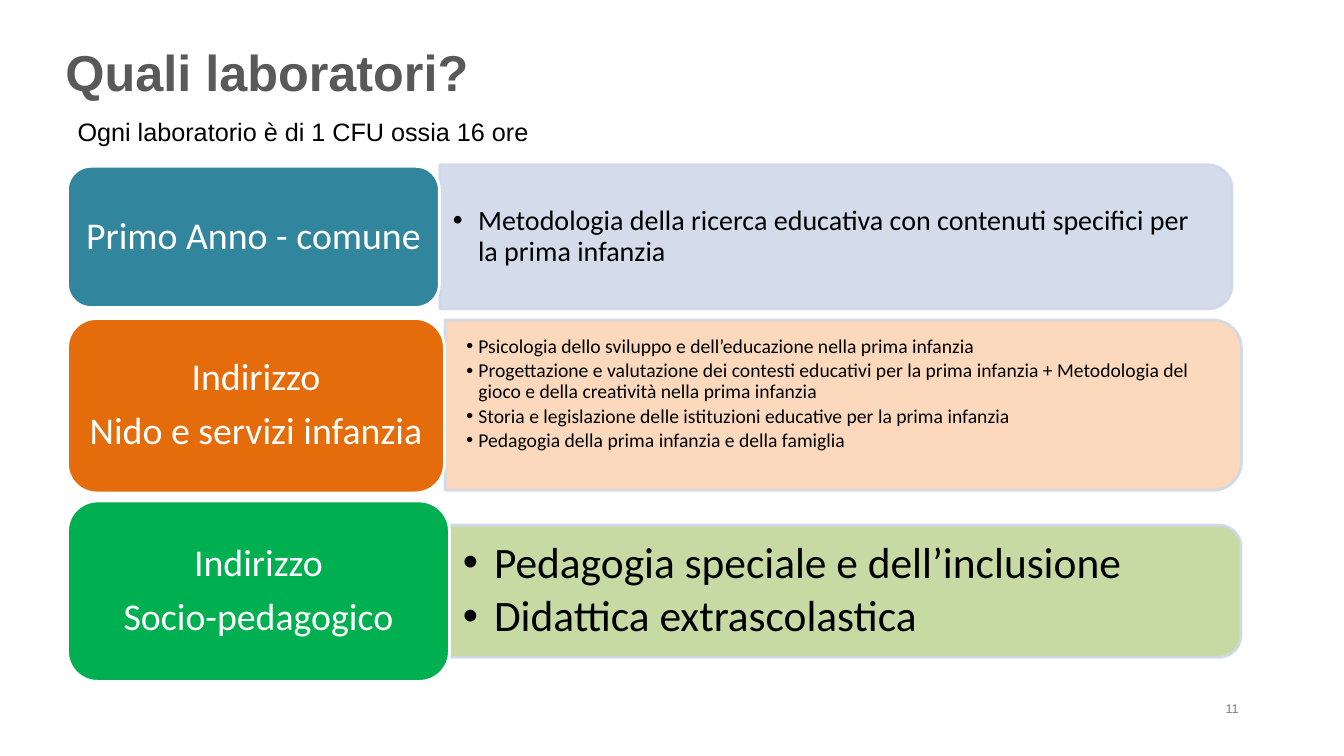
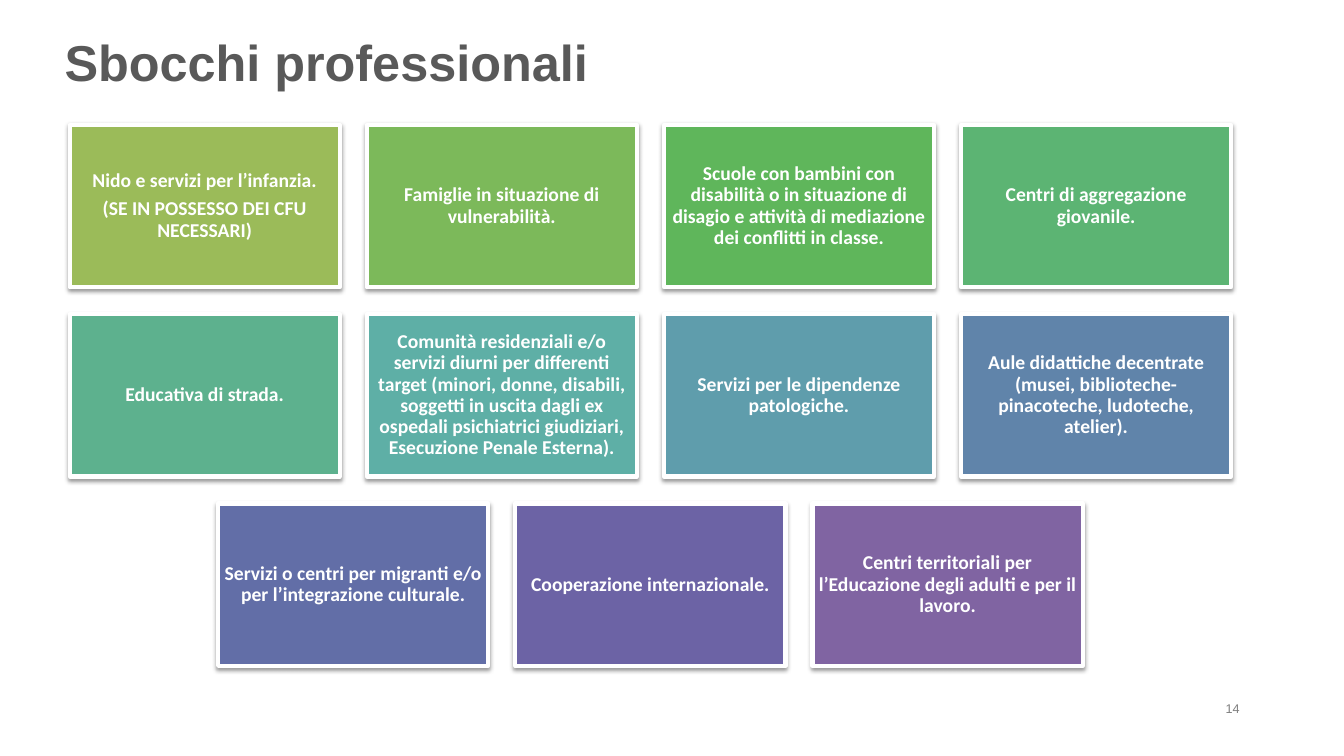
"""Build two slides on degree workshops and career outlets."""
from dataclasses import dataclass

from lxml import etree
from pptx import Presentation
from pptx import util as u
from pptx.dml.color import RGBColor
from pptx.enum import shapes, text
from pptx.oxml.ns import qn

WIDTH, HEIGHT = u.Inches(13.33), u.Inches(7.5)
WHITE = RGBColor(0xFF, 0xFF, 0xFF)
BLACK = RGBColor(0x00, 0x00, 0x00)
TITLE_GREY = RGBColor(0x59, 0x59, 0x59)
NUMBER_GREY = RGBColor(0x7F, 0x7F, 0x7F)
TEAL = RGBColor(0x31, 0x85, 0x9C)
ORANGE = RGBColor(0xE4, 0x6C, 0x0A)
GREEN = RGBColor(0x00, 0xB0, 0x50)
PALE_BLUE = RGBColor(0xD0, 0xD8, 0xE8)
PALE_ORANGE = RGBColor(0xFC, 0xD5, 0xB5)
PALE_GREEN = RGBColor(0xC3, 0xD6, 0x9B)
CARD_COLORS = [RGBColor.from_string(code) for code in (
    "9BBB59", "7CB95A", "5FB65B", "5CB473", "5DB18E", "5EAFA6",
    "5F9DAC", "6084AA", "626EA7", "6C63A5", "8064A2")]

TITLE = {"name": "Arial", "size": u.Pt(36), "bold": True}
NOTE = {"name": "Arial", "size": u.Pt(18), "bold": False}
NUMBER = {"name": "Arial", "size": u.Pt(9), "bold": False}
HEADER = {"name": "Calibri", "size": u.Pt(27), "bold": False}
CARD = {"name": "Calibri", "size": u.Pt(14), "bold": True}
LEFT, CENTER = text.PP_ALIGN.LEFT, text.PP_ALIGN.CENTER
TOP, MIDDLE = text.MSO_ANCHOR.TOP, text.MSO_ANCHOR.MIDDLE


@dataclass(frozen=True)
class Box:
    """A rectangle in percent of the slide's width and height."""
    left: float
    top: float
    width: float
    height: float

    def place(self) -> tuple[int, int, int, int]:
        """Return the rectangle in slide units."""
        return (int(WIDTH * self.left / 100), int(HEIGHT * self.top / 100),
                int(WIDTH * self.width / 100), int(HEIGHT * self.height / 100))


@dataclass(frozen=True)
class Track:
    """A coloured header with its list panel."""
    header: Box
    header_color: RGBColor
    labels: list[str]
    panel: Box
    panel_color: RGBColor
    items: list[str]
    size: float
    indent: float
    inset: float
    bottom: float


NUMBER_BOX = Box(90.45, 92, 4.58, 5.33)
NOTE_BOX = Box(5.02, 14.67, 84.67, 5.33)
FIRST_CARD = Box(5.18, 16.53, 20.1, 21.47)
COLUMNS = 4
GAP = 0.1 * FIRST_CARD.width
ROW_GAP = GAP * WIDTH / HEIGHT

TRACKS = [
    Track(Box(5.02, 22, 27.67, 18.67), TEAL, ["Primo Anno - comune"],
          Box(32.72, 21.8, 58.95, 19.07), PALE_BLUE,
          ["Metodologia della ricerca educativa con contenuti specifici per "
           "la prima infanzia"], 20, 0.25, 0.13, 0.06),
    Track(Box(5.02, 42.13, 28.05, 23.07), ORANGE,
          ["Indirizzo", "Nido e servizi infanzia"],
          Box(33.12, 42.33, 59.25, 22.53), PALE_ORANGE,
          ["Psicologia dello sviluppo e dell’educazione nella prima infanzia",
           "Progettazione e valutazione dei contesti educativi per la prima "
           "infanzia + Metodologia del gioco e della creatività nella prima "
           "infanzia",
           "Storia e legislazione delle istituzioni educative per la prima "
           "infanzia",
           "Pedagogia della prima infanzia e della famiglia"],
          14, 0.12, 0.21, 0.28),
    Track(Box(5.02, 66.27, 28.42, 23.87), GREEN,
          ["Indirizzo", "Socio-pedagogico"],
          Box(33.46, 69.47, 58.88, 17.47), PALE_GREEN,
          ["Pedagogia speciale e dell’inclusione", "Didattica extrascolastica"],
          31, 0.31, 0.13, 0.06),
]
CAREERS = [
    ["Nido e servizi per l’infanzia.", "(SE IN POSSESSO DEI CFU NECESSARI)"],
    ["Famiglie in situazione di vulnerabilità."],
    ["Scuole con bambini con disabilità o in situazione di disagio e attività "
     "di mediazione dei conflitti in classe."],
    ["Centri di aggregazione giovanile."],
    ["Educativa di strada."],
    ["Comunità residenziali e/o servizi diurni per differenti target (minori, "
     "donne, disabili, soggetti in uscita dagli ex ospedali psichiatrici "
     "giudiziari, Esecuzione Penale Esterna)."],
    ["Servizi per le dipendenze patologiche."],
    ["Aule didattiche decentrate (musei, biblioteche-pinacoteche, ludoteche, "
     "atelier)."],
    ["Servizi o centri per migranti e/o per l’integrazione culturale."],
    ["Cooperazione internazionale."],
    ["Centri territoriali per l’Educazione degli adulti e per il lavoro."],
]


def move(shape, box: Box) -> None:
    """Put a shape on a percent rectangle."""
    for name, value in zip(("left", "top", "width", "height"), box.place()):
        setattr(shape, name, value)


def write(shape, lines: list[str], font: dict, color: RGBColor, align=LEFT,
          anchor=TOP, insets=(0.1, 0.05, 0.1, 0.05), spacing: float = 1,
          after: float = 0, indent: float = 0) -> None:
    """Fill a shape with paragraphs, bulleted when an indent is given."""
    frame = shape.text_frame
    settings = {"word_wrap": True, "auto_size": text.MSO_AUTO_SIZE.NONE,
                "vertical_anchor": anchor}
    for side, inset in zip(("left", "top", "right", "bottom"), insets):
        settings["margin_" + side] = u.Inches(inset)
    for name, value in settings.items():
        setattr(frame, name, value)
    layout = {"alignment": align, "line_spacing": spacing,
              "space_before": u.Pt(0),
              "space_after": u.Pt(round(font["size"].pt * after, 1))}
    for index, line in enumerate(lines):
        para = frame.add_paragraph() if index else frame.paragraphs[0]
        for name, value in layout.items():
            setattr(para, name, value)
        marks = para._p.get_or_add_pPr()
        marks.set("marL", str(u.Inches(indent)))
        marks.set("indent", str(-u.Inches(indent)))
        if indent:
            bullet_font = etree.SubElement(marks, qn("a:buFont"))
            bullet_font.set("typeface", "Arial")
            etree.SubElement(marks, qn("a:buChar")).set("char", "•")
        else:
            etree.SubElement(marks, qn("a:buNone"))
        span = para.add_run()
        span.text = line
        for name, value in font.items():
            setattr(span.font, name, value)
        span.font.color.rgb = color


def add_block(page, kind, box: Box, fill: RGBColor, line: RGBColor,
              weight: float):
    """Add a flat filled and outlined shape."""
    block = page.shapes.add_shape(kind, *box.place())
    block.shadow.inherit = False
    block.fill.solid()
    block.fill.fore_color.rgb = fill
    block.line.color.rgb = line
    block.line.width = u.Pt(weight)
    return block


def add_page(deck, layout: str, title: str, title_box: Box, number: str):
    """Add a slide with its title and number."""
    page = deck.slides.add_slide(deck.slide_layouts.get_by_name(layout))
    move(page.shapes.title, title_box)
    write(page.shapes.title, [title], TITLE, TITLE_GREY, anchor=MIDDLE)
    number_box = page.shapes.add_textbox(*NUMBER_BOX.place())
    write(number_box, [number], NUMBER, NUMBER_GREY)
    return page


def add_panel(page, box: Box, color: RGBColor) -> None:
    """Add a translucent panel rounded on its right side."""
    panel = add_block(page, shapes.MSO_SHAPE.ROUND_2_SAME_RECTANGLE, box,
                      color, PALE_BLUE, 2)
    left, top, width, height = box.place()
    panel.left = left + (width - height) // 2
    panel.top = top + (height - width) // 2
    panel.width, panel.height = height, width
    panel.rotation = 90
    for tint in panel.element.spPr.iter(qn("a:srgbClr")):
        etree.SubElement(tint, qn("a:alpha")).set("val", "90000")


def add_track(page, track: Track, body) -> None:
    """Draw a panel, its list and its header."""
    add_panel(page, track.panel, track.panel_color)
    move(body, track.panel)
    body.width -= u.Inches(0.07)
    body.element.getparent().append(body.element)
    font = {"name": "Calibri", "size": u.Pt(track.size), "bold": False}
    insets = (track.inset, 0.06, track.inset, track.bottom)
    write(body, track.items, font, BLACK, anchor=MIDDLE, insets=insets,
          spacing=0.9, after=0.15, indent=track.indent)
    header = add_block(page, shapes.MSO_SHAPE.ROUNDED_RECTANGLE, track.header,
                       track.header_color, WHITE, 2)
    write(header, track.labels, HEADER, WHITE, CENTER, MIDDLE,
          (0.11, 0.06, 0.11, 0.06), 0.9, 0.35)


def add_card(page, box: Box, color: RGBColor, lines: list[str]) -> None:
    """Draw a career card with a soft shadow below."""
    card = add_block(page, shapes.MSO_SHAPE.RECTANGLE, box, color, WHITE, 3)
    effects = card.element.spPr.find(qn("a:effectLst"))
    shadow = etree.SubElement(effects, qn("a:outerShdw"))
    for name, value in {"blurRad": u.Pt(3.1), "dist": u.Pt(1.6),
                        "dir": 5400000, "rotWithShape": 0}.items():
        shadow.set(name, str(value))
    tint = etree.SubElement(shadow, qn("a:srgbClr"))
    tint.set("val", str(BLACK))
    etree.SubElement(tint, qn("a:alpha")).set("val", "38000")
    write(card, lines, CARD, WHITE, CENTER, MIDDLE, (0.06,) * 4, 0.9, 0.35)


def build_workshops(deck) -> None:
    """Build the slide of workshops by track."""
    page = add_page(deck, "Comparison", "Quali laboratori?",
                    Box(4.12, 3.87, 85.57, 11.2), "11")
    _, note, *bodies = page.placeholders
    move(note, NOTE_BOX)
    write(note, ["Ogni laboratorio è di 1 CFU ossia 16 ore"], NOTE, BLACK)
    for track, body in zip(TRACKS, bodies):
        add_track(page, track, body)


def build_careers(deck) -> None:
    """Build the slide of career cards, centring the short last row."""
    page = add_page(deck, "Title Only", "Sbocchi professionali",
                    Box(4.05, 4.4, 79.72, 7.47), "14")
    step = FIRST_CARD.width + GAP
    for index, (lines, color) in enumerate(zip(CAREERS, CARD_COLORS)):
        row, column = divmod(index, COLUMNS)
        missing = max(0, (row + 1) * COLUMNS - len(CAREERS))
        box = Box(FIRST_CARD.left + (column + missing / 2) * step,
                  FIRST_CARD.top + row * (FIRST_CARD.height + ROW_GAP),
                  FIRST_CARD.width, FIRST_CARD.height)
        add_card(page, box, color, lines)


def main() -> None:
    """Create and save the deck."""
    deck = Presentation()
    deck.slide_width, deck.slide_height = WIDTH, HEIGHT
    build_workshops(deck)
    build_careers(deck)
    deck.save("out.pptx")


if __name__ == "__main__":
    main()
